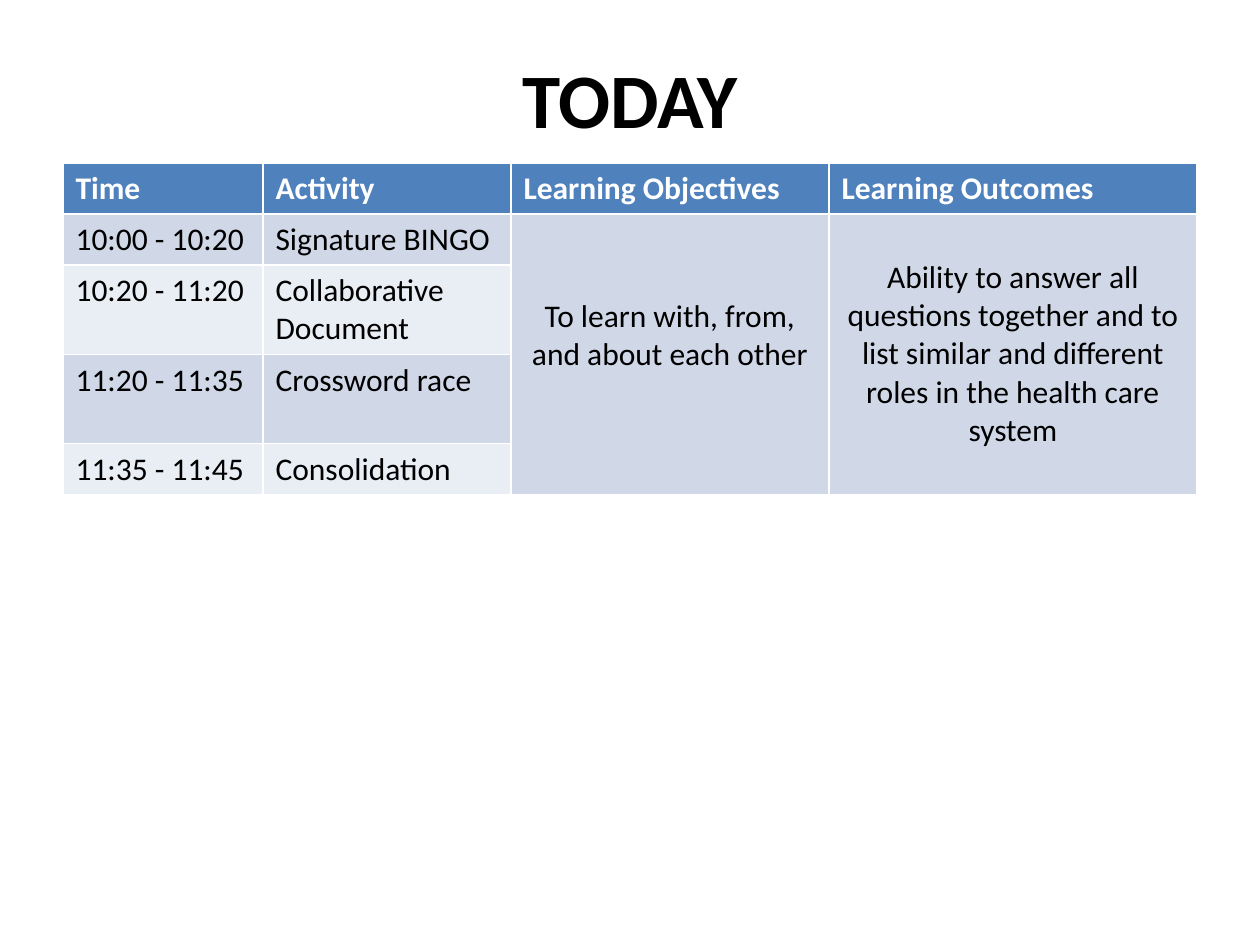
import dataclasses

import pptx
import pptx.dml.color
import pptx.enum.text
import pptx.util

PX = 914400 // 126  # one scale: EMU per px
ALIGN = pptx.enum.text.PP_ALIGN


@dataclasses.dataclass(frozen=True)
class Theme:
    font: str = "Calibri"
    title_size: int = 44
    table_size: int = 18
    text: str = "000000"
    header_text: str = "FFFFFF"
    header_fill: str = "4F81BD"
    bands: tuple = ("D0D8E8", "E9EDF4")


THEME = Theme()
HEADINGS = ["Time", "Activity", "Learning Objectives", "Learning Outcomes"]
SCHEDULE = [
    ("10:00 - 10:20", "Signature BINGO"),
    ("10:20 - 11:20", "Collaborative Document"),
    ("11:20 - 11:35", "Crossword race"),
    ("11:35 - 11:45", "Consolidation"),
]
# Column, text and top margin of the cells that span the whole schedule
SHARED_GOALS = [
    (2, "To learn with, from, and about each other", 83),
    (3, "Ability to answer all questions together and to list similar and "
        "different roles in the health care system", 44),
]
COLUMN_WIDTHS = [200, 248, 318, 368]
ROW_HEIGHTS = [51, 51, 89, 89, 51]


def rgb(value):
    return pptx.dml.color.RGBColor.from_string(value)


def px(*lengths):
    return [length * PX for length in lengths]


def style_text(frame, size, color, bold, align):
    paragraph = frame.paragraphs[0]
    paragraph.alignment = align
    paragraph.font.name = THEME.font
    paragraph.font.size = pptx.util.Pt(size)
    paragraph.font.bold = bold
    paragraph.font.color.rgb = rgb(color)


def fill_cell(cell, text, fill, color=THEME.text, bold=False, align=ALIGN.LEFT):
    cell.text = text
    cell.fill.solid()
    cell.fill.fore_color.rgb = rgb(fill)
    style_text(cell.text_frame, THEME.table_size, color, bold, align)


def place_title(slide, left, top, width, height):
    title = slide.shapes.title
    title.left, title.top, title.width, title.height = px(left, top, width, height)
    title.text_frame.text = "TODAY"
    title.text_frame.vertical_anchor = pptx.enum.text.MSO_ANCHOR.MIDDLE
    style_text(title.text_frame, THEME.title_size, THEME.text, True, ALIGN.CENTER)


def place_agenda(slide, left, top):
    box = px(left, top, sum(COLUMN_WIDTHS), sum(ROW_HEIGHTS))
    agenda = slide.shapes.add_table(len(ROW_HEIGHTS), len(COLUMN_WIDTHS), *box).table
    for column, width in zip(agenda.columns, px(*COLUMN_WIDTHS)):
        column.width = width
    for row, height in zip(agenda.rows, px(*ROW_HEIGHTS)):
        row.height = height

    # Header row
    for column, heading in enumerate(HEADINGS):
        fill_cell(agenda.cell(0, column), heading, THEME.header_fill,
                  THEME.header_text, bold=True)

    # Times and activities in alternating bands
    for row, entry in enumerate(SCHEDULE, start=1):
        for column, text in enumerate(entry):
            fill_cell(agenda.cell(row, column), text, THEME.bands[(row - 1) % 2])

    # Goals shared by all activities
    for column, text, margin_top in SHARED_GOALS:
        goal = agenda.cell(1, column)
        goal.merge(agenda.cell(len(SCHEDULE), column))
        fill_cell(goal, text, THEME.bands[0], align=ALIGN.CENTER)
        goal.margin_top = margin_top * PX


def main():
    deck = pptx.Presentation()
    deck.slide_width, deck.slide_height = pptx.util.Inches(10), pptx.util.Inches(7.5)
    slide = deck.slides.add_slide(deck.slide_layouts.get_by_name("Title Only"))
    place_title(slide, 63, 19, 1134, 158)
    place_agenda(slide, 63, 163)
    deck.save("out.pptx")


if __name__ == "__main__":
    main()
